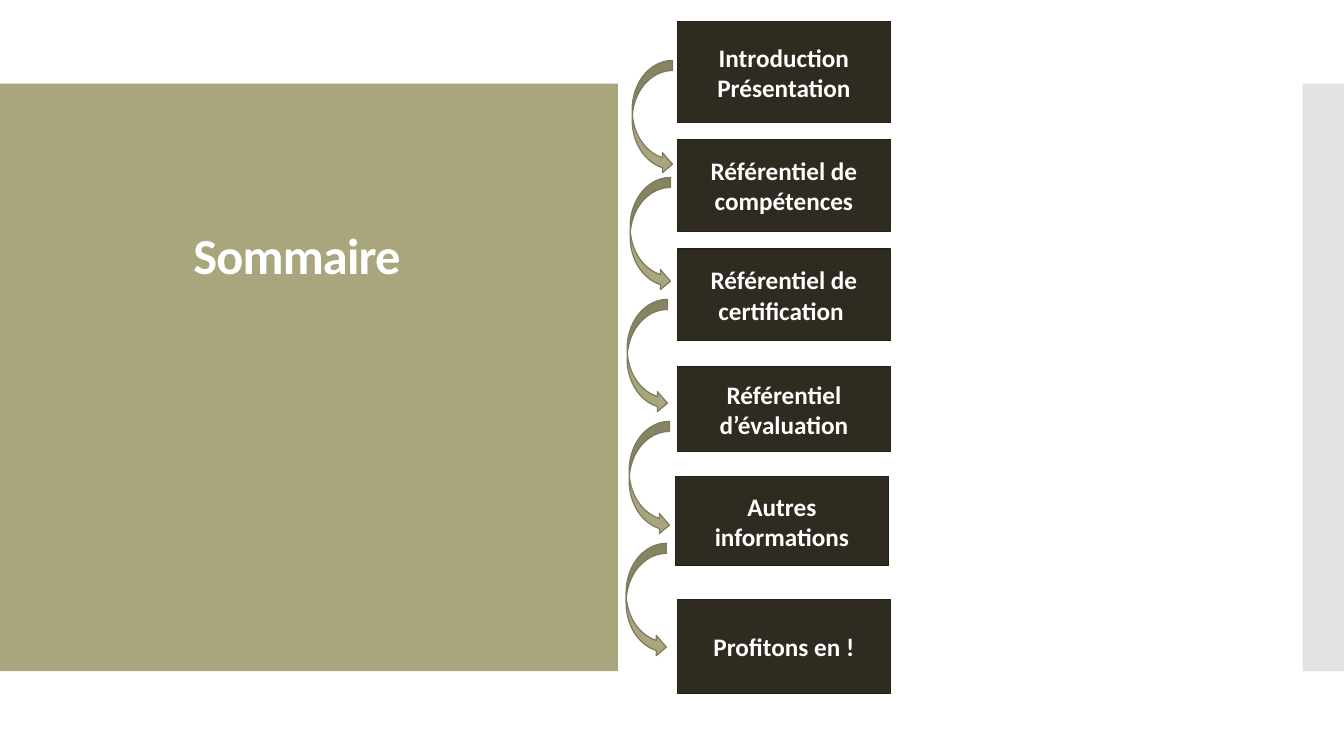
from lxml import etree
from pptx import Presentation
from pptx.dml.color import RGBColor
from pptx.enum.shapes import MSO_SHAPE
from pptx.enum.text import MSO_ANCHOR, PP_ALIGN
from pptx.oxml.ns import qn
from pptx.util import Inches, Pt

RECTANGLE = MSO_SHAPE.RECTANGLE
CURVED_ARROW = MSO_SHAPE.CURVED_RIGHT_ARROW
CENTER = PP_ALIGN.CENTER
MIDDLE = MSO_ANCHOR.MIDDLE
TITLE_ONLY = 5

COLORS = {
    "olive": "A9A57C",
    "olive_line": "7D7A5C",
    "dark": "2F2B20",
    "dark_line": "232018",
    "grey": "C8C8C8",
    "white": "FFFFFF",
}
TITLE_FONT = {"name": "Calibri", "size": Pt(36), "bold": True}
STEP_FONT = {"name": "Calibri", "size": Pt(18), "bold": True}

BAND_TOP, BAND_HEIGHT = 0.83, 5.83
STEP_WIDTH = 2.11
# left, top, height, lines
STEPS = [
    (6.72, 0.21, 1.01, ["Introduction", "Présentation"]),
    (6.72, 1.38, 0.92, ["Référentiel de compétences"]),
    (6.72, 2.47, 0.91, ["Référentiel de certification "]),
    (6.72, 3.64, 0.84, ["Référentiel d’évaluation"]),
    (6.70, 4.73, 0.88, ["Autres informations"]),
    (6.72, 5.95, 0.93, ["Profitons en !"]),
]
ARROW_SIZE = (0.4, 1.13)
ARROW_CORNERS = [(6.27, 0.6), (6.25, 1.76), (6.22, 2.97), (6.24, 4.18), (6.21, 5.39)]


def rgb(name):
    return RGBColor.from_string(COLORS[name])


def add_filled(page, kind, box, fill, line=None):
    shape = page.shapes.add_shape(kind, *map(Inches, box))
    shape.shadow.inherit = False
    shape.fill.solid()
    shape.fill.fore_color.rgb = rgb(fill)
    if line:
        shape.line.color.rgb = rgb(line)
        shape.line.width = Pt(0.85)
    else:
        shape.line.fill.background()
    return shape


def write_lines(shape, lines, font_format):
    """Write centred white paragraphs, one for each line."""
    frame = shape.text_frame
    frame.word_wrap = True
    frame.vertical_anchor = MIDDLE
    frame.text = "\n".join(lines)
    for para in frame.paragraphs:
        para.alignment = CENTER
        for span in para.runs:
            for key, value in font_format.items():
                setattr(span.font, key, value)
            span.font.color.rgb = rgb("white")


def add_side_band(page, box):
    band = add_filled(page, RECTANGLE, box, "grey")
    color = band.fill._xPr.find(qn("a:solidFill"))[0]
    etree.SubElement(color, qn("a:alpha"), val="50000")


def add_title_panel(page, box):
    left, top, width, height = box
    add_filled(page, RECTANGLE, box, "olive")
    title = page.shapes.title
    page.shapes._spTree.append(title._element)  # bring in front of the panel
    place = {"left": left + 0.21, "top": top + 1.33, "width": width - 0.66, "height": 0.8}
    for key, value in place.items():
        setattr(title, key, Inches(value))
    write_lines(title, ["Sommaire"], TITLE_FONT)
    para = title.text_frame.paragraphs[0]
    para.line_spacing = 0.9
    para.runs[0].font._element.set("spc", "-60")


def add_steps(page):
    for left, top, height, lines in STEPS:
        step = add_filled(page, RECTANGLE, (left, top, STEP_WIDTH, height), "dark", "dark_line")
        write_lines(step, lines, STEP_FONT)
    for corner in ARROW_CORNERS:
        add_filled(page, CURVED_ARROW, corner + ARROW_SIZE, "olive", "olive_line")


def main():
    deck = Presentation()
    deck.slide_width, deck.slide_height = Inches(13.33), Inches(7.5)
    page = deck.slides.add_slide(deck.slide_layouts[TITLE_ONLY])
    add_side_band(page, (12.92, BAND_TOP, 0.41, BAND_HEIGHT))
    add_title_panel(page, (0, BAND_TOP, 6.13, BAND_HEIGHT))
    add_steps(page)
    deck.save("out.pptx")


if __name__ == "__main__":
    main()
